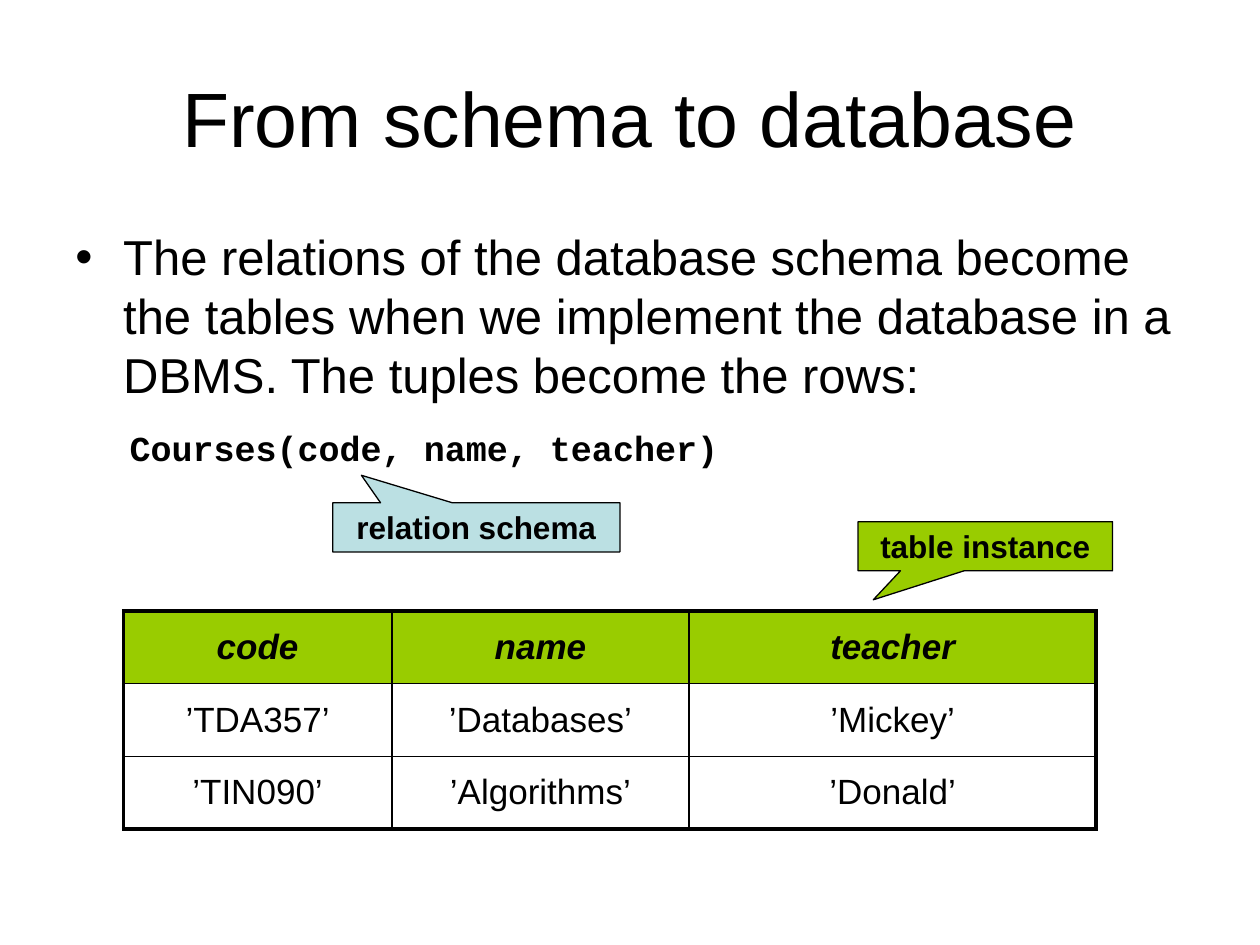
from lxml import etree
from pptx import Presentation
from pptx.dml.color import RGBColor
from pptx.enum.shapes import MSO_SHAPE
from pptx.enum.text import MSO_ANCHOR, PP_ALIGN
from pptx.oxml.ns import qn
from pptx.util import Inches, Pt

BLACK = RGBColor(0, 0, 0)
WHITE = RGBColor(255, 255, 255)
GREEN = RGBColor(0x99, 0xCC, 0x00)
BLUE = RGBColor(0xBB, 0xE0, 0xE3)
CENTER = PP_ALIGN.CENTER
MIDDLE = MSO_ANCHOR.MIDDLE
CALLOUT = MSO_SHAPE.RECTANGULAR_CALLOUT
THICK, THIN = Pt(2.25), Pt(1)

ROWS = [
    ["code", "name", "teacher"],
    ["’TDA357’", "’Databases’", "’Mickey’"],
    ["’TIN090’", "’Algorithms’", "’Donald’"],
]
COLS = [2.13, 2.36, 3.23]


def style(para, size, bold=False, italic=False, face="Arial"):
    for run in para.runs:
        font = run.font
        font.name, font.size = face, Pt(size)
        font.bold, font.italic = bold, italic
        font.color.rgb = BLACK


def add_box(slide, left, top, width, height):
    box = slide.shapes.add_textbox(
        Inches(left), Inches(top), Inches(width), Inches(height))
    box.text_frame.word_wrap = True
    return box.text_frame


def add_title(slide, left, top, width, height):
    frame = add_box(slide, left, top, width, height)
    frame.vertical_anchor = MIDDLE
    frame.text = "From schema to database"
    para = frame.paragraphs[0]
    para.alignment = CENTER
    style(para, 44)


def indent(para, left, first, mark=None):
    """Set the left margin and first-line indent, with an optional bullet."""
    props = para._p.get_or_add_pPr()
    props.set("marL", str(Inches(left)))
    props.set("indent", str(Inches(first)))
    if mark:
        etree.SubElement(props, qn("a:buFont"), typeface="Arial")
        etree.SubElement(props, qn("a:buChar"), char=mark)


def add_body(slide, left, top, width, height):
    frame = add_box(slide, left, top, width, height)
    frame.text = ("The relations of the database schema become the tables "
                  "when we implement the database in a DBMS. "
                  "The tuples become the rows:")
    point = frame.paragraphs[0]
    style(point, 28)
    indent(point, 0.38, -0.38, "•")

    schema = frame.add_paragraph()
    schema.text = "Courses(code, name, teacher)"
    schema.space_before = Pt(13.5)
    style(schema, 20, bold=True, face="Courier New")
    indent(schema, 0.43, 0)


def add_callout(slide, text, fill, left, top, width, height, tip):
    shape = slide.shapes.add_shape(
        CALLOUT, Inches(left), Inches(top), Inches(width), Inches(height))
    shape.shadow.inherit = False
    shape.adjustments[0], shape.adjustments[1] = tip
    shape.fill.solid()
    shape.fill.fore_color.rgb = fill
    shape.line.color.rgb = BLACK
    shape.line.width = Pt(0.75)
    frame = shape.text_frame
    frame.text = text
    frame.word_wrap = False
    frame.vertical_anchor = MIDDLE
    para = frame.paragraphs[0]
    para.alignment = CENTER
    style(para, 18, bold=True)


def add_edges(cell, widths):
    """Draw the left, right, top and bottom borders, in that order."""
    props = cell._tc.get_or_add_tcPr()
    for pos, (side, width) in enumerate(zip("LRTB", widths)):
        line = etree.Element(qn(f"a:ln{side}"), w=str(width))
        fill = etree.SubElement(line, qn("a:solidFill"))
        etree.SubElement(fill, qn("a:srgbClr"), val=str(BLACK))
        props.insert(pos, line)


def add_grid(slide, left, top, width, height):
    last_row, last_col = len(ROWS) - 1, len(COLS) - 1
    table = slide.shapes.add_table(
        len(ROWS), len(COLS), Inches(left), Inches(top),
        Inches(width), Inches(height)).table
    for col, size in zip(table.columns, COLS):
        col.width = Inches(size)
    for r, row in enumerate(ROWS):
        head = r == 0
        for c, text in enumerate(row):
            cell = table.cell(r, c)
            cell.text = text
            cell.vertical_anchor = MIDDLE
            cell.fill.solid()
            cell.fill.fore_color.rgb = GREEN if head else WHITE
            para = cell.text_frame.paragraphs[0]
            para.alignment = CENTER
            style(para, 20, bold=head, italic=head)
            outer = (c == 0, c == last_col, head, r == last_row)
            add_edges(cell, [THICK if edge else THIN for edge in outer])


def main():
    deck = Presentation()
    deck.slide_width, deck.slide_height = Inches(10), Inches(7.5)
    slide = deck.slides.add_slide(deck.slide_layouts[6])
    add_title(slide, 0.5, 0.3, 9, 1.25)
    add_body(slide, 0.5, 1.75, 9, 2.39)
    add_grid(slide, 0.98, 4.85, sum(COLS), 1.73)
    add_callout(slide, "relation schema", BLUE,
                2.64, 3.99, 2.28, 0.39, (-0.4, -1.06))
    add_callout(slide, "table instance", GREEN,
                6.81, 4.14, 2.02, 0.39, (-0.44, 1.09))
    deck.save("out.pptx")


if __name__ == "__main__":
    main()
